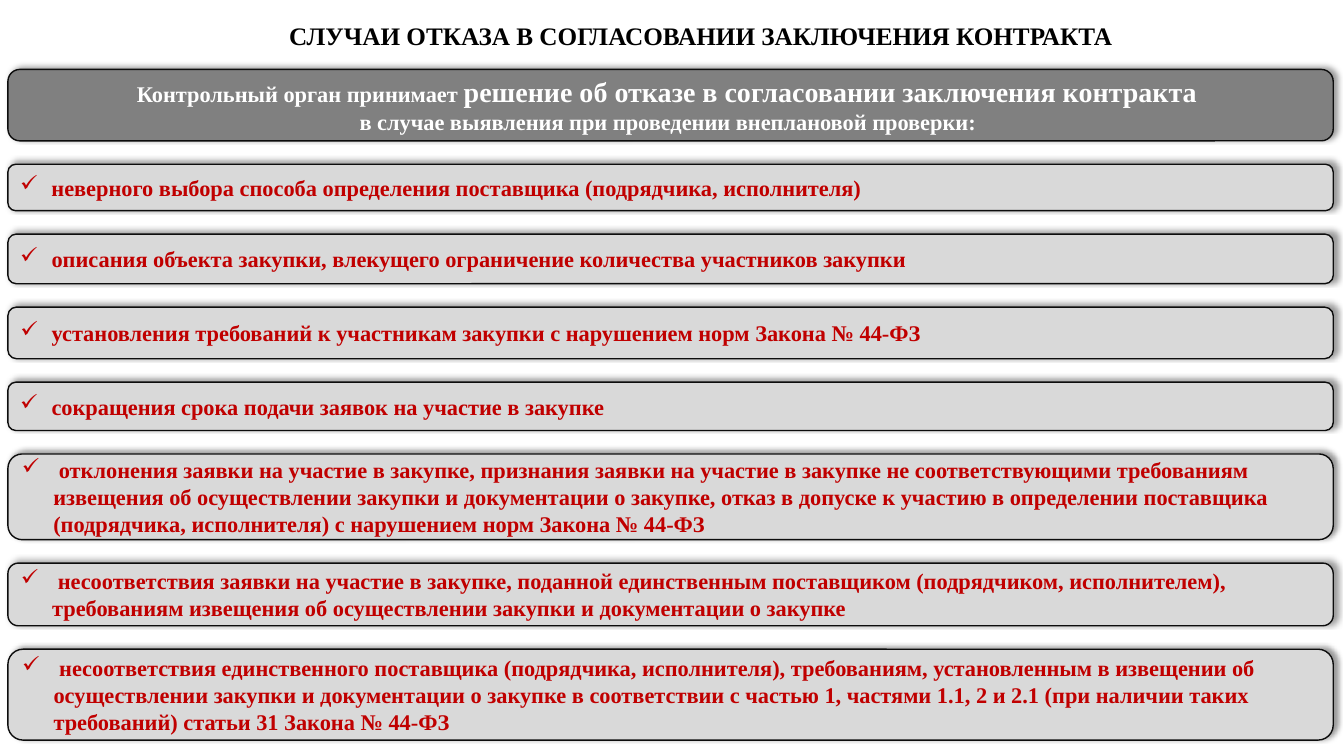
from lxml import etree
from pptx import Presentation
from pptx.dml.color import RGBColor
from pptx.enum.shapes import MSO_SHAPE
from pptx.enum.text import MSO_ANCHOR, PP_ALIGN
from pptx.oxml import parse_xml
from pptx.oxml.ns import qn
from pptx.util import Cm, Pt

BLACK = RGBColor(0x00, 0x00, 0x00)
WHITE = RGBColor(0xFF, 0xFF, 0xFF)
GRAY = RGBColor(0x80, 0x80, 0x80)
LIGHT = RGBColor(0xD9, 0xD9, 0xD9)
EDGE = RGBColor(0x0D, 0x0D, 0x0D)
RED = RGBColor(0xC0, 0x00, 0x00)

SHADOW = (
    '<a:outerShdw xmlns:a="http://schemas.openxmlformats.org/drawingml/2006/main" '
    'blurRad="50800" dist="38100" dir="18900000" algn="bl" rotWithShape="0">'
    '<a:prstClr val="black"><a:alpha val="40000"/></a:prstClr></a:outerShdw>'
)
LEFT, TOP, WIDTH, GAP = 0.2, 1.75, 33.4, 0.59
HEADER_HEIGHT = 1.8

HEADER = [
    [("Контрольный орган принимает ", 16),
     ("решение об отказе в согласовании заключения контракта ", 20)],
    [("в случае выявления при проведении внеплановой проверки: ", 16)],
]
REASONS = [
    (1.17, "неверного выбора способа определения поставщика (подрядчика, исполнителя)"),
    (1.25, "описания объекта закупки, влекущего ограничение количества участников закупки"),
    (1.3, "установления требований к участникам закупки с нарушением норм Закона № 44-ФЗ"),
    (1.22, "сокращения срока подачи заявок на участие в закупке"),
    (2.16, " отклонения заявки на участие в закупке, признания заявки на участие в закупке "
           "не соответствующими требованиям извещения об осуществлении закупки и документации "
           "о закупке, отказ в допуске к участию в определении поставщика (подрядчика, "
           "исполнителя) с нарушением норм Закона № 44-ФЗ"),
    (1.58, " несоответствия заявки на участие в закупке, поданной единственным поставщиком "
           "(подрядчиком, исполнителем), требованиям извещения об осуществлении закупки "
           "и документации о закупке"),
    (2.29, " несоответствия единственного поставщика (подрядчика, исполнителя), требованиям, "
           "установленным в извещении об осуществлении закупки и документации о закупке "
           "в соответствии с частью 1, частями 1.1, 2 и 2.1 (при наличии таких требований) "
           "статьи 31 Закона № 44-ФЗ"),
]


def write(sp, lines, color, align=PP_ALIGN.CENTER, bullet=None):
    tf = sp.text_frame
    tf.word_wrap = True
    tf.vertical_anchor = MSO_ANCHOR.MIDDLE
    for i, line in enumerate(lines):
        p = tf.add_paragraph() if i else tf.paragraphs[0]
        p.alignment = align
        for text, size in line:
            r = p.add_run()
            r.text = text
            r.font.name = "Times New Roman"
            r.font.size = Pt(size)
            r.font.bold = True
            r.font.color.rgb = color
        if bullet:
            pPr = p._p.get_or_add_pPr()
            pPr.set("marL", str(Cm(0.79)))
            pPr.set("indent", str(-Cm(0.79)))
            etree.SubElement(pPr, qn("a:buChar")).set("char", bullet)


def add_panel(s, top, height, fill):
    sp = s.shapes.add_shape(MSO_SHAPE.ROUNDED_RECTANGLE,
                            Cm(LEFT), Cm(top), Cm(WIDTH), Cm(height))
    sp.fill.solid()
    sp.fill.fore_color.rgb = fill
    sp.line.color.rgb = EDGE
    sp.line.width = Pt(1)
    sp.shadow.inherit = False
    sp._element.spPr.find(qn("a:effectLst")).append(parse_xml(SHADOW))
    return sp


prs = Presentation()
prs.slide_width, prs.slide_height = Cm(33.87), Cm(19.05)
s = prs.slides.add_slide(prs.slide_layouts[6])

title = s.shapes.add_textbox(Cm(0.81), Cm(0.2), Cm(33.87), Cm(1.37))
write(title, [[("СЛУЧАИ ОТКАЗА В СОГЛАСОВАНИИ ЗАКЛЮЧЕНИЯ КОНТРАКТА ", 18)]], BLACK)

write(add_panel(s, TOP, HEADER_HEIGHT, GRAY), HEADER, WHITE)

top = TOP + HEADER_HEIGHT + GAP
for height, reason in REASONS:
    write(add_panel(s, top, height, LIGHT), [[(reason, 16)]], RED,
          align=PP_ALIGN.LEFT, bullet="✓")
    top += height + GAP

prs.save("out.pptx")
